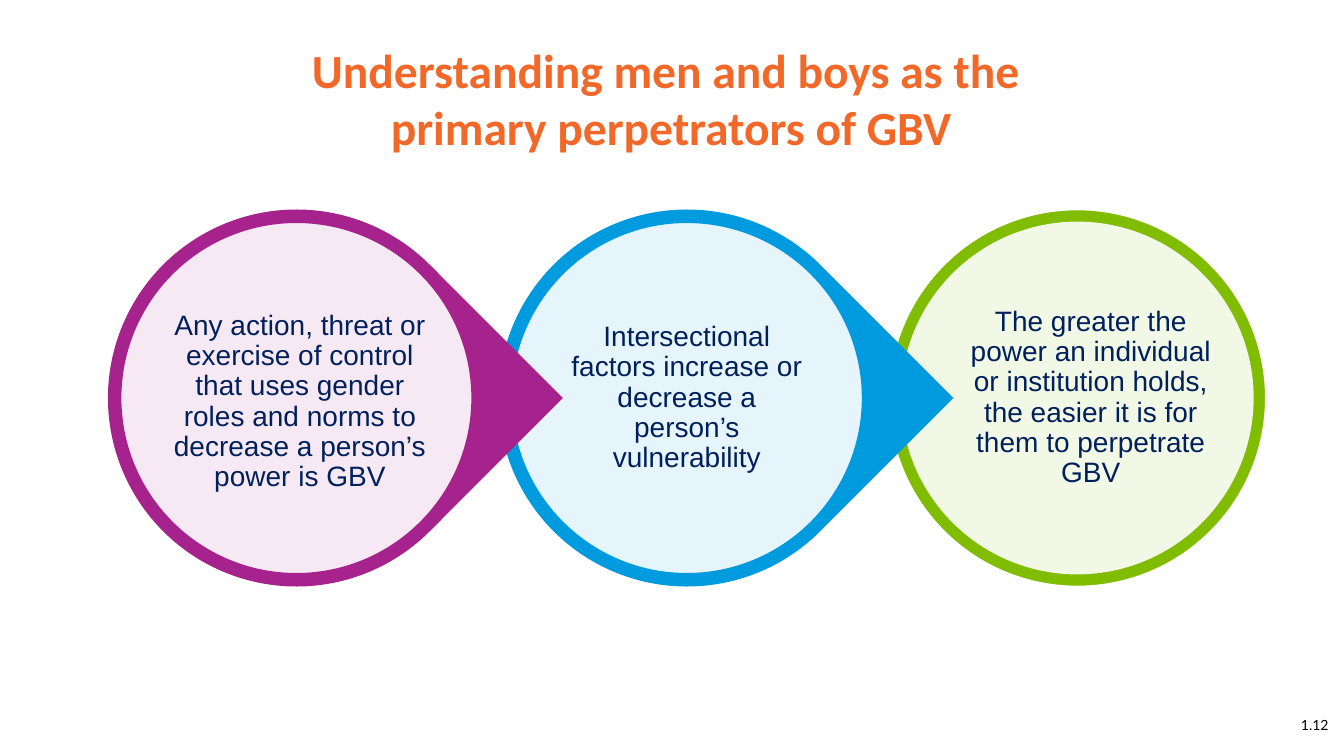
"""Build a slide of three linked circles on the perpetrators of GBV."""
from lxml.etree import SubElement
from pptx import Presentation
from pptx.dml.color import RGBColor
from pptx.enum.shapes import MSO_SHAPE as Preset
from pptx.enum.text import MSO_ANCHOR as Anchor, PP_ALIGN as Align
from pptx.oxml.ns import qn
from pptx.util import Cm, Pt

ORANGE = RGBColor(0xF2, 0x68, 0x29)
PURPLE = RGBColor(0xA6, 0x22, 0x8C)
BLUE = RGBColor(0x00, 0x9A, 0xDE)
GREEN = RGBColor(0x80, 0xBC, 0x00)
NAVY = RGBColor(0x00, 0x20, 0x5C)
BLACK = RGBColor(0x00, 0x00, 0x00)
WHITE = RGBColor(0xFF, 0xFF, 0xFF)

FIRST_CENTER, PITCH, CENTER_Y = 7.47, 9.84, 10.03
DISC_SIZE, TEXT_HEIGHT = 8.89, 6.35

STAGES = [
    (PURPLE, Preset.TEAR, 9.5, PURPLE, 7.09, 0.09, 0.1,
     "Any action, threat or exercise of control that uses gender roles and norms "
     "to decrease a person’s power is GBV"),
    (BLUE, Preset.TEAR, 9.5, BLUE, 6.35, 0, 0,
     "Intersectional factors increase or decrease a person’s vulnerability"),
    (GREEN, Preset.OVAL, 9.53, None, 6.35, 0.34, 0,
     "The greater the power an individual or institution holds, the easier it is "
     "for them to perpetrate GBV"),
]


class SlideBuilder:
    """Hold the slide and draw its shapes and texts in one style."""

    def __init__(self, slide):
        self.slide = slide

    def shape(self, preset, center_x, size, fill, line=None, opacity=100):
        shape = self.slide.shapes.add_shape(
            preset, Cm(center_x - size / 2), Cm(CENTER_Y - size / 2), Cm(size), Cm(size))
        shape.shadow.inherit = False
        shape.fill.solid()
        shape.fill.fore_color.rgb = fill
        if opacity < 100:
            color = shape.fill._xPr.find(qn("a:solidFill"))[0]
            SubElement(color, qn("a:alpha")).set("val", str(opacity * 1000))
        if line is None:
            shape.line.fill.background()
        else:
            shape.line.color.rgb = line
            shape.line.width = Pt(2)
        return shape

    def text(self, text, left, top, width, height, font, size, color, align=Align.CENTER,
             anchor=Anchor.TOP, margin=0.25, spacing=1.0, bold=False, wrap=True):
        box = self.slide.shapes.add_textbox(Cm(left), Cm(top), Cm(width), Cm(height))
        frame = box.text_frame
        frame.word_wrap = wrap
        frame.vertical_anchor = anchor
        frame.margin_left = frame.margin_right = Cm(margin)
        frame.margin_top = frame.margin_bottom = Cm(margin)
        paragraph = frame.paragraphs[0]
        paragraph.text = text
        paragraph.alignment = align
        paragraph.line_spacing = spacing
        for run in paragraph.runs:
            run.font.name = font
            run.font.size = Pt(size)
            run.font.bold = bold
            run.font.color.rgb = color
        return box

    def stage(self, center_x, color, preset, size, disc_line, width, shift_x, shift_y, text):
        ring_line = WHITE if disc_line is None else None
        ring = self.shape(preset, center_x, size, color, ring_line)
        if preset == Preset.TEAR:
            ring.rotation = 45
        self.shape(Preset.OVAL, center_x, DISC_SIZE, WHITE, disc_line, opacity=90)
        self.text(text, center_x + shift_x - width / 2, CENTER_Y + shift_y - TEXT_HEIGHT / 2,
                  width, TEXT_HEIGHT, "Arial", 20, NAVY,
                  anchor=Anchor.MIDDLE, margin=0.08, spacing=0.9)


def main():
    presentation = Presentation()
    presentation.slide_width, presentation.slide_height = Cm(33.87), Cm(19.05)
    slide = presentation.slides.add_slide(presentation.slide_layouts[6])
    builder = SlideBuilder(slide)
    for index, stage in reversed(list(enumerate(STAGES))):
        builder.stage(FIRST_CENTER + index * PITCH, *stage)
    builder.text("Understanding men and boys as the \vprimary perpetrators of GBV",
                 1.14, 0.79, 31.55, 3.3, "Calibri", 34, ORANGE, bold=True, wrap=False)
    builder.text("1.12", 32.28, 17.5, 1.45, 0.99, "Lato", 10, BLACK,
                 align=Align.RIGHT, margin=0.13, spacing=2.0).text_frame.margin_right = Cm(0.25)
    presentation.save("out.pptx")


if __name__ == "__main__":
    main()
